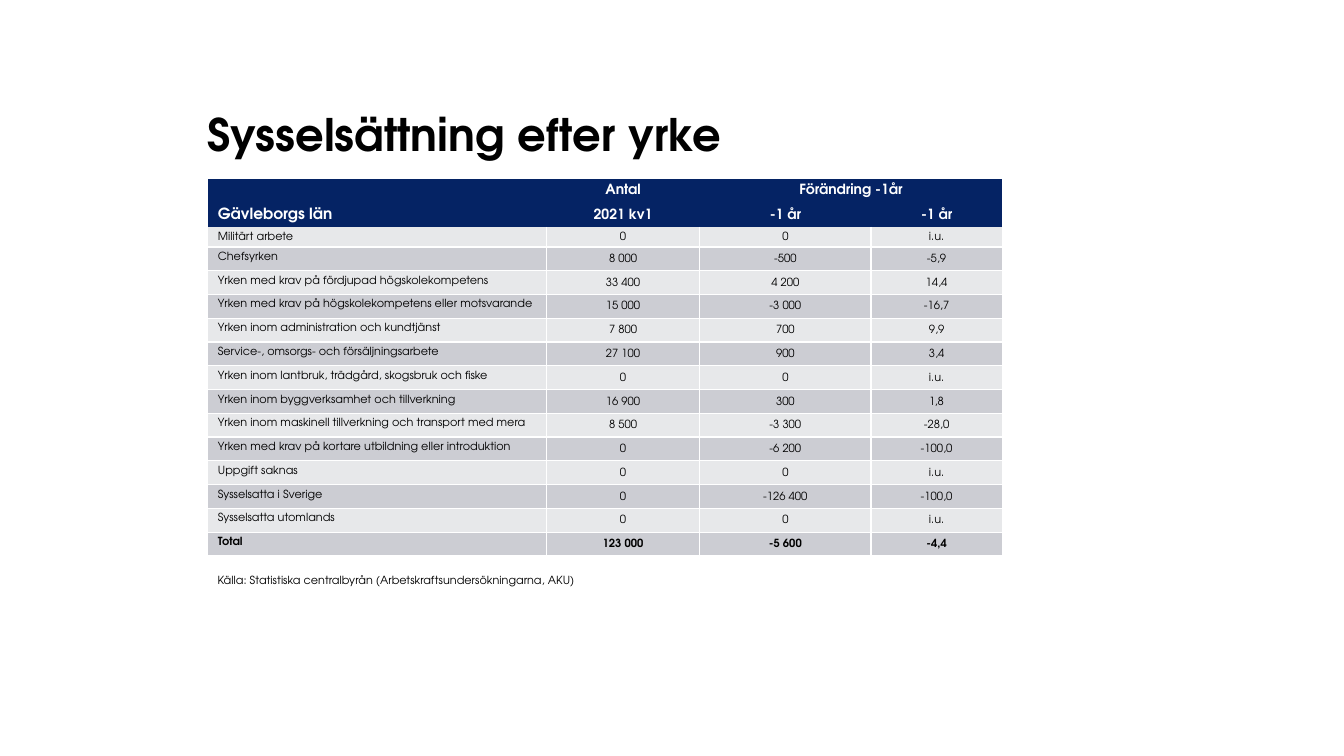
from dataclasses import dataclass

from lxml.etree import SubElement
from pptx import Presentation
from pptx.dml.color import RGBColor
from pptx.enum.text import MSO_ANCHOR, MSO_AUTO_SIZE, PP_ALIGN
from pptx.oxml.ns import qn
from pptx.util import Inches, Pt


@dataclass(frozen=True)
class Theme:
    """Colours, font and type sizes of the slide."""
    font: str = "TeX Gyre Adventor"
    navy: str = "052364"
    light: str = "E7E8EA"
    grey: str = "CCCDD3"
    white: str = "FFFFFF"
    black: str = "000000"
    title: int = 32
    region: int = 11
    heading: int = 10
    body: int = 8


THEME = Theme()
LEFT = 2.06
COLUMN_WIDTHS = [3.36, 1.52, 1.7, 1.3]
TABLE_HEIGHT = 3.74
HEADER_HEIGHTS = [0.23, 0.24]
FIRST_ROW_HEIGHT = 0.2
HEADERS = [
    ["", "Antal", "Förändring -1år", ""],
    ["Gävleborgs län", "2021 kv1", "-1 år", "-1 år"],
]
OCCUPATIONS = [
    ["Militärt arbete", "0", "0", "i.u."],
    ["Chefsyrken", "8 000", "-500", "-5,9"],
    ["Yrken med krav på fördjupad högskolekompetens", "33 400", "4 200", "14,4"],
    ["Yrken med krav på högskolekompetens eller motsvarande", "15 000", "-3 000", "-16,7"],
    ["Yrken inom administration och kundtjänst", "7 800", "700", "9,9"],
    ["Service-, omsorgs- och försäljningsarbete", "27 100", "900", "3,4"],
    ["Yrken inom lantbruk, trädgård, skogsbruk och fiske", "0", "0", "i.u."],
    ["Yrken inom byggverksamhet och tillverkning", "16 900", "300", "1,8"],
    ["Yrken inom maskinell tillverkning och transport med mera", "8 500", "-3 300", "-28,0"],
    ["Yrken med krav på kortare utbildning eller introduktion", "0", "-6 200", "-100,0"],
    ["Uppgift saknas", "0", "0", "i.u."],
    ["Sysselsatta i Sverige", "0", "-126 400", "-100,0"],
    ["Sysselsatta utomlands", "0", "0", "i.u."],
    ["Total", "123 000", "-5 600", "-4,4"],
]


def write_text(text_frame, text, size, color, bold=False, alignment=PP_ALIGN.LEFT):
    """Set one paragraph of text in the theme font."""
    text_frame.text = text
    paragraph = text_frame.paragraphs[0]
    paragraph.alignment = alignment
    for font in [paragraph.font] + [run.font for run in paragraph.runs]:
        font.name = THEME.font
        font.size = Pt(size)
        font.bold = bold
        font.color.rgb = RGBColor.from_string(color)


def set_borders(cell, sides):
    """Draw thin white borders on the given sides and none on the others."""
    properties = cell._tc.get_or_add_tcPr()
    for index, side in enumerate(("L", "R", "T", "B")):
        line = properties.makeelement(qn(f"a:ln{side}"), {"w": str(Pt(1))})
        if side in sides:
            fill = SubElement(line, qn("a:solidFill"))
            SubElement(fill, qn("a:srgbClr"), val=THEME.white)
        else:
            SubElement(line, qn("a:noFill"))
        properties.insert(index, line)


def format_cell(cell, text, size, color, fill, bold, is_label, centred, sides):
    """Fill one table cell with its text, margins, colour and borders."""
    alignment = PP_ALIGN.LEFT if is_label else PP_ALIGN.CENTER
    write_text(cell.text_frame, text, size, color, bold, alignment)
    cell.vertical_anchor = MSO_ANCHOR.MIDDLE if centred else MSO_ANCHOR.TOP
    cell.margin_left = cell.margin_right = Inches(0.01 if centred else 0.1)
    cell.margin_top = Inches(0.01 if centred else 0.05)
    cell.margin_bottom = 0
    cell.fill.solid()
    cell.fill.fore_color.rgb = RGBColor.from_string(fill)
    set_borders(cell, sides)


def add_title(slide, left, top, width, height):
    """Place the slide title in its placeholder."""
    title = slide.shapes.title
    title.left, title.top, title.width, title.height = map(Inches, (left, top, width, height))
    frame = title.text_frame
    frame.margin_left = frame.margin_right = frame.margin_top = frame.margin_bottom = 0
    frame.vertical_anchor = MSO_ANCHOR.BOTTOM
    frame.word_wrap = True
    frame.auto_size = MSO_AUTO_SIZE.NONE
    write_text(frame, "Sysselsättning efter yrke", THEME.title, THEME.black, True)


def add_occupation_table(slide, left, top, height):
    """Build the employment table with its two header rows."""
    heights = HEADER_HEIGHTS + [FIRST_ROW_HEIGHT]
    equal_rows = len(OCCUPATIONS) - 1
    heights += [(height - sum(heights)) / equal_rows] * equal_rows
    box = map(Inches, (left, top, sum(COLUMN_WIDTHS), height))
    table = slide.shapes.add_table(len(heights), len(COLUMN_WIDTHS), *box).table
    for column, width in zip(table.columns, COLUMN_WIDTHS):
        column.width = Inches(width)
    for row, row_height in zip(table.rows, heights):
        row.height = Inches(row_height)
    for index, values in enumerate(HEADERS):
        for column, value in enumerate(values):
            size = THEME.heading if column or not index else THEME.region
            format_cell(table.cell(index, column), value, size, THEME.white, THEME.navy,
                        True, column == 0, index == 1 and column > 0, "")
    table.cell(0, 2).merge(table.cell(0, 3))
    for index, values in enumerate(OCCUPATIONS):
        fill = THEME.grey if index % 2 else THEME.light
        is_total = index == len(OCCUPATIONS) - 1
        for column, value in enumerate(values):
            sides = ("L" if column else "") + "RB" + ("T" if index else "")
            format_cell(table.cell(index + len(HEADERS), column), value, THEME.body, THEME.black,
                        fill, is_total, column == 0, column > 0, sides)


def add_source_note(slide, left, top, width, height):
    """Place the source line under the table."""
    note = slide.shapes.add_textbox(*map(Inches, (left, top, width, height)))
    note.text_frame.word_wrap = False
    note.text_frame.auto_size = MSO_AUTO_SIZE.SHAPE_TO_FIT_TEXT
    write_text(note.text_frame, "Källa: Statistiska centralbyrån (Arbetskraftsundersökningarna, AKU)",
               THEME.body, THEME.black)


def main():
    """Build the slide and save the presentation."""
    presentation = Presentation()
    presentation.slide_width = Inches(13.33)
    presentation.slide_height = Inches(7.5)
    slide = presentation.slides.add_slide(presentation.slide_layouts[5])
    add_title(slide, LEFT, 0.37, 9.22, 1.22)
    add_occupation_table(slide, LEFT, 1.78, TABLE_HEIGHT)
    add_source_note(slide, LEFT, 5.64, 3.8, 0.24)
    presentation.save("out.pptx")


if __name__ == "__main__":
    main()
